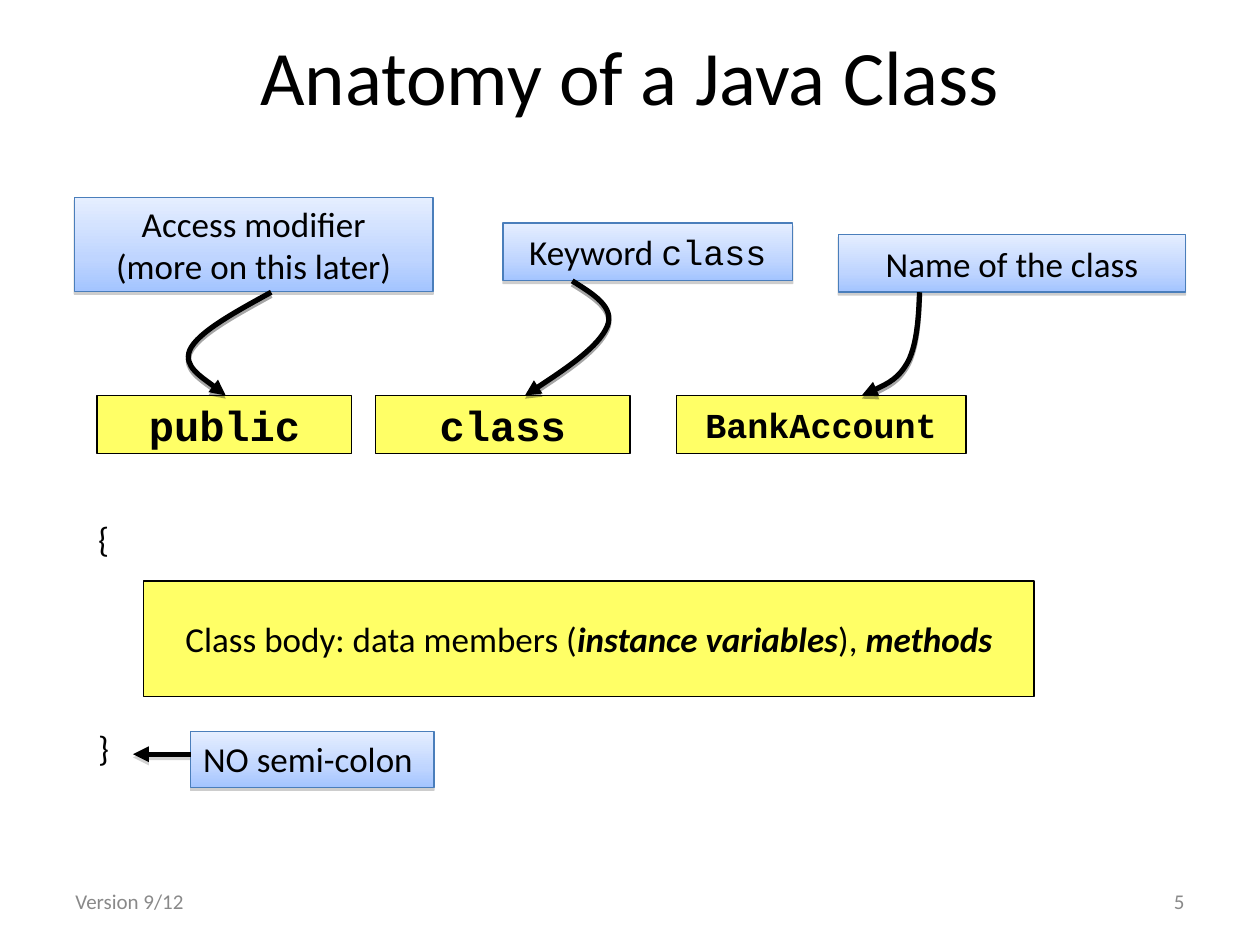
from copy import deepcopy
from dataclasses import dataclass
from lxml.etree import SubElement
from pptx import Presentation
from pptx.dml.color import RGBColor
from pptx.enum.shapes import MSO_CONNECTOR, MSO_SHAPE
from pptx.enum.text import MSO_ANCHOR, PP_ALIGN
from pptx.oxml.ns import qn
from pptx.util import Pt


@dataclass(frozen=True)
class Theme:
    """Colours, fonts and type sizes of the slide."""
    ink: str = "000000"
    grey: str = "898989"
    shade: str = "808080"
    edge: str = "4A7EBB"
    yellow: str = "FFFF66"
    blues: tuple = ((0, "E5EEFF"), (0.65, "BFD5FF"), (1, "A3C4FF"))
    sans: str = "Calibri"
    mono: str = "Courier New"
    title: int = 44
    code: int = 24
    text: int = 20
    small: int = 12


THEME = Theme()


def color(code):
    """Turn a hex code into a colour."""
    return RGBColor.from_string(code)


def write(shape, runs, size=THEME.text, font=THEME.sans, ink=THEME.ink, bold=None,
          align=PP_ALIGN.CENTER, anchor=MSO_ANCHOR.MIDDLE, wrap=True, before=0):
    """Fill a shape with one paragraph, given as text or (text, style) runs."""
    frame = shape.text_frame
    frame.word_wrap = wrap
    frame.vertical_anchor = anchor
    para = frame.paragraphs[0]
    para.alignment = align
    para.space_before = Pt(before)
    para.font.size = Pt(size)
    para.font.color.rgb = color(ink)
    para.font.name = font
    para.font.bold = bold
    if isinstance(runs, str):
        para.text = runs
        return
    para.font.name = None if any("name" in style for _, style in runs) else font
    for words, style in runs:
        run = para.add_run()
        run.text = words
        if para.font.name is None:
            run.font.name = font
        for key, value in style.items():
            setattr(run.font, key, value)


def add_text(slide, box, runs, **style):
    """Add a plain text box."""
    write(slide.shapes.add_textbox(*map(Pt, box)), runs, **style)


def add_shadow(shape, code, alpha, drop):
    """Cast a hard shadow straight down."""
    effects = SubElement(shape._element.spPr, qn("a:effectLst"))
    cast = SubElement(effects, qn("a:outerShdw"), blurRad="0", dist=str(Pt(drop)),
                      dir="5400000", rotWithShape="0")
    tint = SubElement(cast, qn("a:srgbClr"), val=code)
    SubElement(tint, qn("a:alpha"), val=str(alpha * 1000))


def add_rect(slide, box, edge):
    """Add a thinly outlined rectangle."""
    rect = slide.shapes.add_shape(MSO_SHAPE.RECTANGLE, *map(Pt, box))
    rect.line.color.rgb = color(edge)
    rect.line.width = Pt(0.75)
    return rect


def add_label(slide, box, runs, **style):
    """Add a blue shaded label."""
    rect = add_rect(slide, box, THEME.edge)
    rect.fill.gradient()
    rect.fill.gradient_angle = 270
    stops = rect._element.spPr.find(".//" + qn("a:gsLst"))
    stops.append(deepcopy(stops[-1]))
    for stop, (place, code) in zip(rect.fill.gradient_stops, THEME.blues):
        stop.position = place
        stop.color.rgb = color(code)
    add_shadow(rect, THEME.shade, 38, 1.6)
    write(rect, runs, **style)


def add_tag(slide, box, runs, **style):
    """Add a yellow code box."""
    rect = add_rect(slide, box, THEME.ink)
    rect.fill.solid()
    rect.fill.fore_color.rgb = color(THEME.yellow)
    rect.shadow.inherit = False
    write(rect, runs, wrap=False, **style)


def style_arrow(arrow, shade):
    """Give a line its weight, head and shadow."""
    arrow.line.color.rgb = color(THEME.ink)
    arrow.line.width = Pt(3)
    SubElement(arrow.line._get_or_add_ln(), qn("a:tailEnd"), type="triangle")
    add_shadow(arrow, shade, 35, 1.8)


def add_curve(slide, points):
    """Draw a curved arrow through a start and triples of Bezier points."""
    start, *rest = [(Pt(x), Pt(y)) for x, y in points]
    maker = slide.shapes.build_freeform(*start)
    maker.add_line_segments(rest, close=False)
    curve = maker.convert_to_shape()
    curve.fill.background()
    track = curve._element.spPr.find(".//" + qn("a:path"))
    lines = track.findall(qn("a:lnTo"))
    for first in range(0, len(lines), 3):
        bend = SubElement(track, qn("a:cubicBezTo"))
        for line in lines[first:first + 3]:
            bend.append(line[0])
            track.remove(line)
    style_arrow(curve, THEME.ink)


def draw_header(slide, box):
    """Place the labels, the code boxes and the curves between them."""
    left, top, _, high = box
    row = 33
    base = high - row
    labels = (
        (0.5, 0, 205, 53.5, "Access modifier\v(more on this later)"),
        (245.5, 14.5, 165.5, row, [("Keyword ", {}), ("class", {"name": THEME.mono})]),
        (437, 21, 198.5, row, "Name of the class"),
    )
    tags = ((13.5, 145.5, "public", THEME.code), (172.5, 145.5, "class", THEME.code),
            (344.5, 165.5, "BankAccount", THEME.text))
    curves = (
        ((113, 54), (92, 65.5), (71, 77), (66.5, 87), (62.5, 96.5), (83.5, 110), (87, base)),
        ((285, 47.5), (297, 55), (309.5, 62.5), (305, 73.5), (300, 85), (279, 99.5),
         (258, base)),
        ((483.5, 54), (483, 68.5), (482, 83.5), (477, 93.5), (471.5, 103.5), (460.5, 109),
         (450.5, base)),
    )
    for x, y, wide, tall, words in labels:
        add_label(slide, (left + x, top + y, wide, tall), words, wrap=False)
    for x, wide, word, size in tags:
        add_tag(slide, (left + x, top + base, wide, row), word, size=size,
                font=THEME.mono, bold=True)
    for points in curves:
        add_curve(slide, [(left + x, top + y) for x, y in points])


def draw_body(slide, box):
    """Place the braces, the class body and the closing note."""
    left, top, wide, high = box
    row = 32
    end = high - row - 6.5
    plain = {"align": PP_ALIGN.LEFT, "anchor": MSO_ANCHOR.TOP, "before": 11.2}
    for y, brace in ((0, "{"), (end, "}")):
        add_text(slide, (left, top + y, 40, row), brace, **plain)
    strong = {"bold": True, "italic": True}
    add_tag(slide, (left + 33, top + 40, wide - 33, 66),
            [("Class body: data members (", {}), ("instance variables", strong),
             ("), ", {}), ("methods", strong)])
    note = left + 60
    add_label(slide, (note, top + high - row, 139, row), "NO semi-colon", **plain)
    level = top + high - row + 13
    arrow = slide.shapes.add_connector(MSO_CONNECTOR.STRAIGHT, Pt(note), Pt(level),
                                       Pt(note - 33), Pt(level))
    style_arrow(arrow, THEME.shade)


def draw_footer(slide, box):
    """Place the version at the left and the page number at the right."""
    left, top, wide, high = box
    part = 168
    for x, words, align in ((0, "Version 9/12", PP_ALIGN.LEFT),
                            (wide - part, "5", PP_ALIGN.RIGHT)):
        add_text(slide, (left + x, top, part, high), words, size=THEME.small,
                 ink=THEME.grey, align=align)


def main():
    """Build the slide and save it."""
    deck = Presentation()
    deck.slide_width, deck.slide_height = Pt(720), Pt(540)
    slide = deck.slides.add_slide(deck.slide_layouts[6])
    add_text(slide, (36, 16, 648, 53), "Anatomy of a Java Class", size=THEME.title)
    draw_header(slide, (42, 113, 636, 146))
    draw_body(slide, (49, 292, 542, 158))
    draw_footer(slide, (36, 500.5, 648, 29))
    deck.save("out.pptx")


if __name__ == "__main__":
    main()
